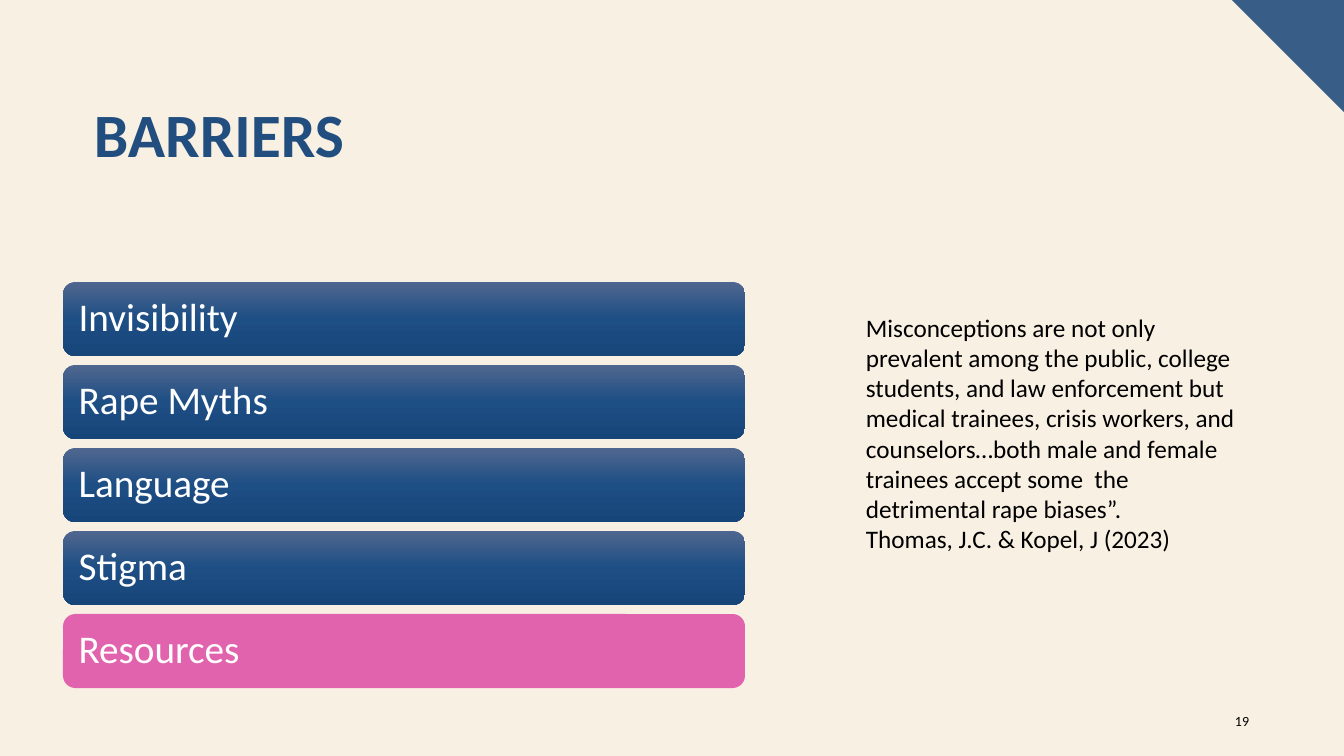
from copy import deepcopy
from dataclasses import dataclass

from pptx import Presentation
from pptx import util as u
from pptx.dml.color import RGBColor
from pptx.enum import shapes, text
from pptx.oxml.ns import qn

EMU_PER_PX = 12192000 / 1344


@dataclass(frozen=True)
class Theme:
    font: str = "Calibri"
    paper: str = "F8F0E3"
    corner: str = "385E88"
    heading: str = "224E7F"
    ink: str = "000000"
    white: str = "FFFFFF"
    pink: str = "E263AD"
    blues: tuple = ((0, "50678F"), (0.5, "1D4E84"), (1, "164579"))
    title_size: int = 44
    bar_size: int = 28
    body_size: int = 18
    number_size: int = 10


THEME = Theme()


def px(value):
    return u.Emu(round(value * EMU_PER_PX))


def rgb(code):
    return RGBColor.from_string(code)


def write(frame, *lines, size, color, bold=False, align=text.PP_ALIGN.LEFT,
          anchor=text.MSO_ANCHOR.TOP, spacing=1.0):
    frame.word_wrap = True
    frame.vertical_anchor = anchor
    for index, line in enumerate(lines):
        para = frame.add_paragraph() if index else frame.paragraphs[0]
        para.alignment = align
        para.line_spacing = spacing
        span = para.add_run()
        span.text = line
        span.font.name = THEME.font
        span.font.size = u.Pt(size)
        span.font.bold = bold
        span.font.color.rgb = rgb(color)


def add_text(page, place, *lines, **style):
    box = page.shapes.add_textbox(*map(px, place))
    write(box.text_frame, *lines, **style)
    return box


def fill_gradient(shape, stops):
    shape.fill.gradient()
    shape.fill.gradient_angle = 270
    stop_list = shape._element.spPr.find(qn("a:gradFill")).find(qn("a:gsLst"))
    while len(stop_list) < len(stops):
        stop_list.append(deepcopy(stop_list[0]))
    for stop, (position, color) in zip(shape.fill.gradient_stops, stops):
        stop.position = position
        stop.color.rgb = rgb(color)


def add_bar(page, place, label, fill):
    bar = page.shapes.add_shape(shapes.MSO_SHAPE.ROUNDED_RECTANGLE, *map(px, place))
    bar.shadow.inherit = False
    bar.line.fill.background()
    if isinstance(fill, str):
        bar.fill.solid()
        bar.fill.fore_color.rgb = rgb(fill)
    else:
        fill_gradient(bar, fill)
    bar.text_frame.margin_left = bar.text_frame.margin_right = px(12)
    write(bar.text_frame, label, size=THEME.bar_size, color=THEME.white,
          anchor=text.MSO_ANCHOR.MIDDLE, spacing=0.9)


def add_corner(page, points, color):
    builder = page.shapes.build_freeform(*points[0], scale=EMU_PER_PX)
    builder.add_line_segments(points[1:], close=True)
    corner = builder.convert_to_shape()
    corner.shadow.inherit = False
    corner.fill.solid()
    corner.fill.fore_color.rgb = rgb(color)
    corner.line.fill.background()


def main():
    deck = Presentation()
    deck.slide_width, deck.slide_height = px(1344), px(756)
    page = deck.slides.add_slide(deck.slide_layouts[6])
    page.background.fill.solid()
    page.background.fill.fore_color.rgb = rgb(THEME.paper)

    add_corner(page, [(1344, 112), (1232, 0), (1344, 0)], THEME.corner)
    add_text(page, (84, 99, 1176, 146), "BARRIERS", size=THEME.title_size,
             color=THEME.heading, bold=True, spacing=0.9)
    add_text(page, (1209, 701, 50, 40), "19", size=THEME.number_size,
             color=THEME.ink, align=text.PP_ALIGN.RIGHT,
             anchor=text.MSO_ANCHOR.MIDDLE)

    barriers = ["Invisibility", "Rape Myths", "Language", "Stigma", "Resources"]
    for row, barrier in enumerate(barriers):
        fill = THEME.pink if barrier == "Resources" else THEME.blues
        add_bar(page, (63, 282 + 83 * row, 682, 74), barrier, fill)

    quote = add_text(
        page, (856, 307, 404, 285),
        "Misconceptions are not only prevalent among the public, college "
        "students, and law enforcement but medical trainees, crisis workers, "
        "and counselors…both male and female trainees accept some  the "
        "detrimental rape biases”.",
        "Thomas, J.C. & Kopel, J (2023)",
        size=THEME.body_size, color=THEME.ink)
    quote.text_frame.auto_size = text.MSO_AUTO_SIZE.SHAPE_TO_FIT_TEXT

    deck.save("out.pptx")


if __name__ == "__main__":
    main()
